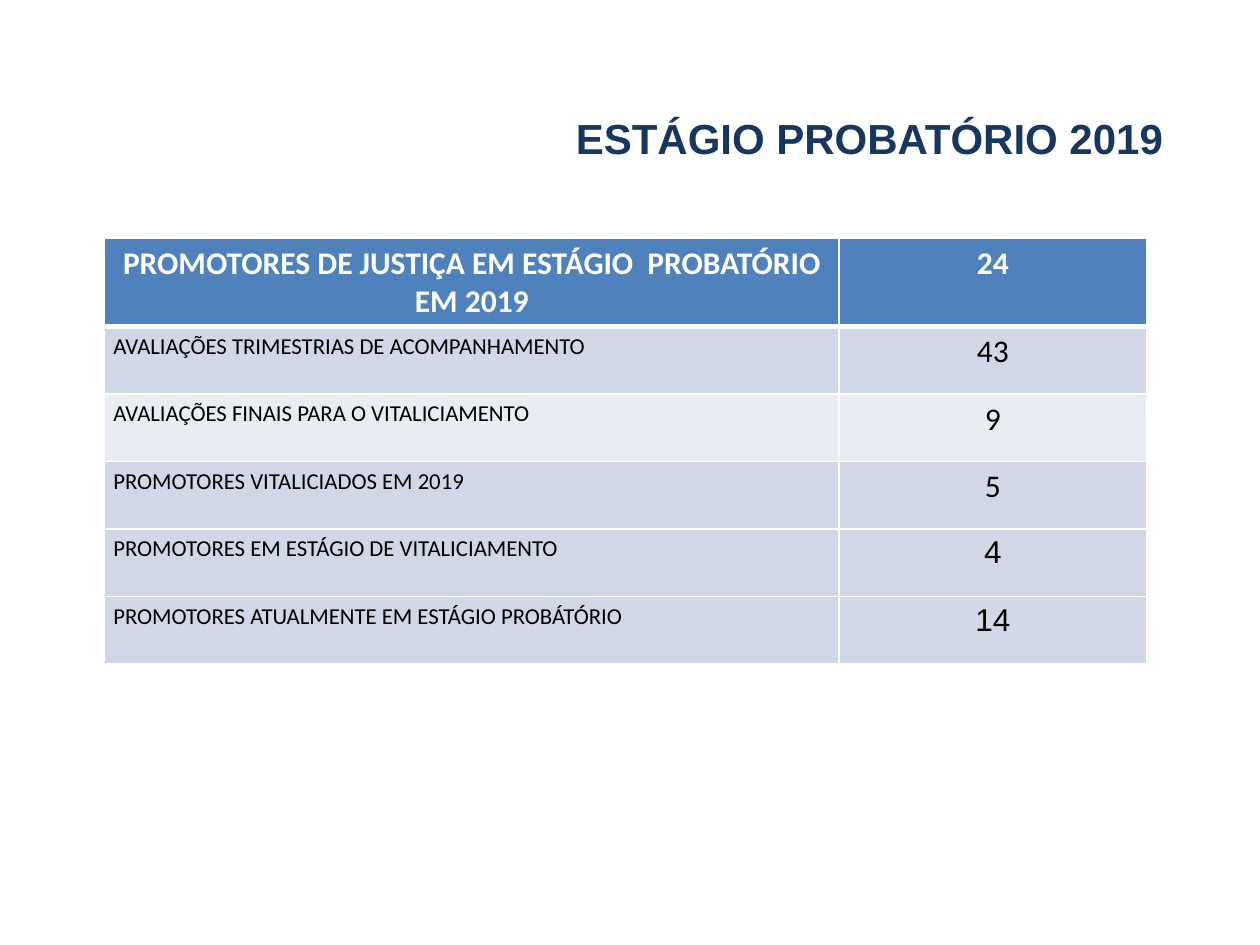
from lxml.etree import SubElement
from pptx import Presentation
from pptx.dml.color import RGBColor
from pptx.enum.text import MSO_ANCHOR, PP_ALIGN
from pptx.oxml.ns import qn
from pptx.util import Inches, Pt

COLORS = {
    "white": "FFFFFF",
    "black": "000000",
    "navy": "17375E",
    "blue": "4F81BD",
    "band": "D0D8E7",
    "pale": "E9ECF3",
}
COLS, ROWS = 100, 75

HEAD = ("PROMOTORES DE JUSTIÇA EM ESTÁGIO  PROBATÓRIO EM 2019", "24")
# label, count, fill, font of the count
BODY = [
    ("AVALIAÇÕES TRIMESTRIAS DE ACOMPANHAMENTO", "43", "band", "Calibri"),
    ("AVALIAÇÕES FINAIS PARA O VITALICIAMENTO", "9", "pale", "Calibri"),
    ("PROMOTORES VITALICIADOS EM 2019", "5", "band", "Calibri"),
    ("PROMOTORES EM ESTÁGIO DE VITALICIAMENTO", "4", "band", "Arial"),
    ("PROMOTORES ATUALMENTE EM ESTÁGIO PROBÁTÓRIO", "14", "band", "Arial"),
]


class Deck:
    """Style and current slide; lengths are columns and rows of the grid."""

    def __init__(self):
        self.prs = Presentation()
        self.prs.slide_width, self.prs.slide_height = Inches(10), Inches(7.5)
        self.slide = self.prs.slides.add_slide(self.prs.slide_layouts[6])

    def wide(self, cols):
        return round(self.prs.slide_width * cols / COLS)

    def high(self, rows):
        return round(self.prs.slide_height * rows / ROWS)

    def area(self, x, y, w, h):
        return self.wide(x), self.high(y), self.wide(w), self.high(h)

    def label(self, frame, text, size, color, font="Calibri", bold=False,
              align=PP_ALIGN.LEFT):
        frame.text = text
        para = frame.paragraphs[0]
        para.alignment = align
        face = para.runs[0].font
        face.name, face.size, face.bold = font, Pt(size), bold
        face.color.rgb = RGBColor.from_string(COLORS[color])
        return para

    def title(self, text, *place):
        frame = self.slide.shapes.add_textbox(*self.area(*place)).text_frame
        frame.word_wrap = True
        frame.vertical_anchor = MSO_ANCHOR.MIDDLE
        para = self.label(frame, text, 24, "navy", "Arial", True, PP_ALIGN.RIGHT)
        para.line_spacing = 0.93

    def table(self, x, y, widths, heights):
        place = self.area(x, y, sum(widths), sum(heights))
        grid = self.slide.shapes.add_table(len(heights), len(widths), *place).table
        for col, width in zip(grid.columns, widths):
            col.width = self.wide(width)
        for row, height in zip(grid.rows, heights):
            row.height = self.high(height)
        return grid

    def cell(self, cell, text, size, color, fill, top=0.96, bottom=0.96, **style):
        self.label(cell.text_frame, text, size, color, **style)
        self.border(cell, L=0.96, R=0.96, T=top, B=bottom)
        cell.fill.solid()
        cell.fill.fore_color.rgb = RGBColor.from_string(COLORS[fill])

    def border(self, cell, **sides):
        props = cell._tc.get_or_add_tcPr()
        for side, width in sides.items():
            line = SubElement(props, qn("a:ln" + side), w=str(Pt(width)))
            paint = SubElement(line, qn("a:solidFill"))
            SubElement(paint, qn("a:srgbClr"), val=COLORS["white"])


def main():
    deck = Deck()
    deck.title("ESTÁGIO PROBATÓRIO 2019", 5.9, 6.8, 87.4, 8.7)
    grid = deck.table(8.3, 18.9, [58.3, 24.4], [7] + [5.36] * len(BODY))

    for col, text in enumerate(HEAD):
        deck.cell(grid.cell(0, col), text, 18, "white", "blue", bottom=3,
                  bold=True, align=PP_ALIGN.CENTER)

    for row, (text, count, fill, font) in enumerate(BODY, 1):
        top = 3 if row == 1 else 0.96
        name, value = grid.cell(row, 0), grid.cell(row, 1)
        name.margin_left = name.margin_right = Inches(0.07)
        deck.cell(name, text, 13, "black", fill, top)
        deck.cell(value, count, 18, "black", fill, top, font=font,
                  align=PP_ALIGN.CENTER)

    deck.prs.save("out.pptx")


if __name__ == "__main__":
    main()
